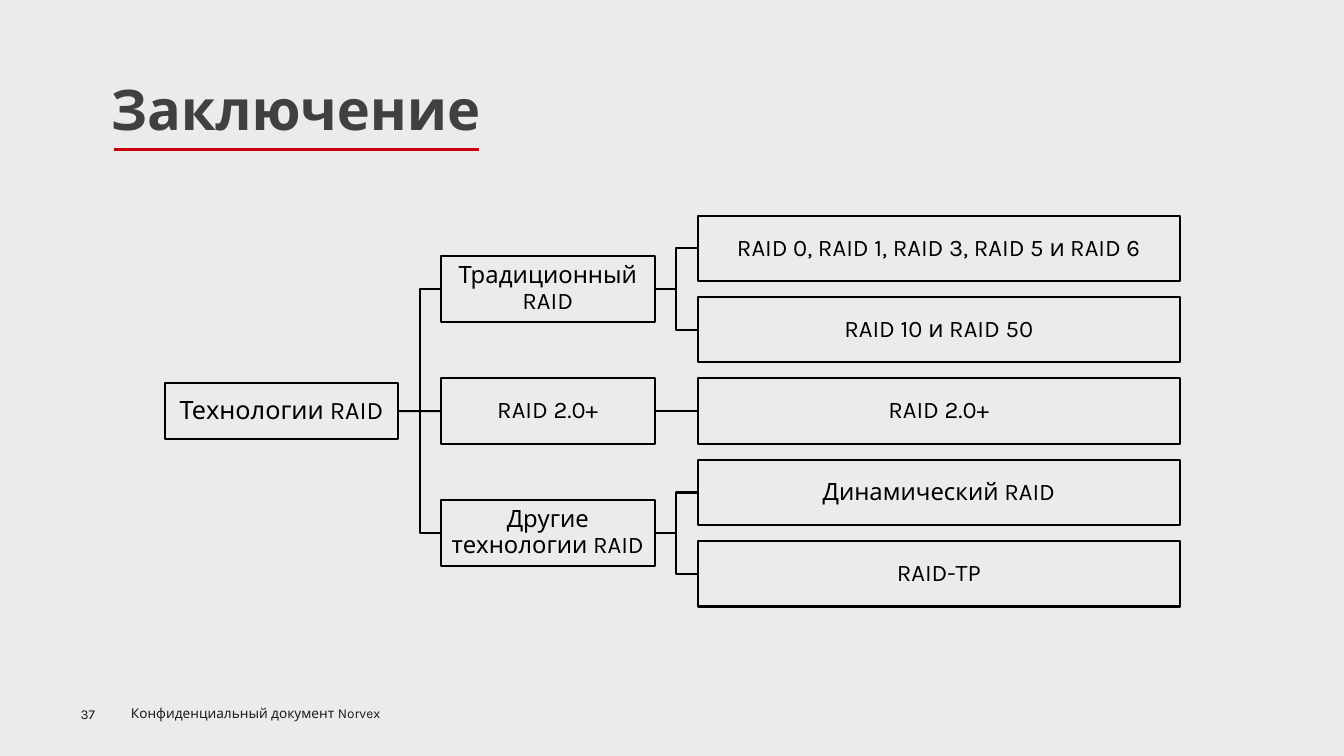
"""Build the closing slide with a tree of RAID technologies."""
from pptx import Presentation, util as u
from pptx.dml.color import RGBColor
from pptx.enum import shapes, text
from pptx.oxml.ns import qn
from lxml import etree

TITLE = "Заключение"
PAGE = "37"
FOOTER = "Конфиденциальный документ Norvex"
ROOT = "Технологии RAID"
BRANCHES = [
    ("Традиционный RAID", ["RAID 0, RAID 1, RAID 3, RAID 5 и RAID 6", "RAID 10 и RAID 50"]),
    ("RAID 2.0+", ["RAID 2.0+"]),
    ("Другие технологии RAID", ["Динамический RAID", "RAID-TP"]),
]

FONT = "Karla"
BLACK, RED, GREY, INK, PAPER = "000000", "C7000B", "404040", "1D1D1B", "EBEBEB"
ROOT_BOX = dict(left=4.15, width=5.89, height=1.4, size=18)
BRANCH_BOX = dict(left=11.11, width=5.39, height=1.65, size=17)
LEAF_BOX = dict(left=17.59, width=12.14, height=1.65, size=17)
FIRST_LEAF, LEAF_STEP = 6.26, 2.05


def color(value):
    return RGBColor.from_string(value)


def style(target, **values):
    for name, value in values.items():
        setattr(target, name, value)


def write(shape, words, size, ink, align, anchor, inset=None, spacing=None, bold=False, wrap=True):
    frame = shape.text_frame
    style(frame, text=words, word_wrap=wrap, vertical_anchor=anchor, auto_size=text.MSO_AUTO_SIZE.NONE)
    if inset is not None:
        for side in ("left", "right", "top", "bottom"):
            setattr(frame, f"margin_{side}", u.Cm(inset))
    paragraph = frame.paragraphs[0]
    style(paragraph, alignment=align, line_spacing=spacing)
    style(paragraph.font, name=FONT, size=u.Pt(size), bold=bold)
    paragraph.font.color.rgb = color(ink)


def add_node(words, middle, left, width, height, size):
    node = slide.shapes.add_shape(
        shapes.MSO_SHAPE.RECTANGLE, u.Cm(left), u.Cm(middle - height / 2), u.Cm(width), u.Cm(height))
    node.shadow.inherit = False
    node.fill.background()
    node.line.color.rgb = color(BLACK)
    node.line.width = u.Pt(1.5)
    write(node, words, size, BLACK, text.PP_ALIGN.CENTER, text.MSO_ANCHOR.MIDDLE, 0.03, 0.9)
    return node


def add_line(kind, ink, width, ends=(0, 0, 0, 0)):
    line = slide.shapes.add_connector(kind, *map(u.Cm, ends))
    line.line.color.rgb = color(ink)
    line.line.width = u.Pt(width)
    etree.SubElement(line._element.spPr, qn("a:effectLst"))
    return line


def join(parent, child, level):
    kind = shapes.MSO_CONNECTOR.STRAIGHT if level else shapes.MSO_CONNECTOR.ELBOW
    line = add_line(kind, BLACK, 1.5)
    line.begin_connect(parent, 3)
    line.end_connect(child, 1)


def add_note(words, box, inset=None):
    note = slide.shapes.add_textbox(*map(u.Cm, box))
    write(note, words, 9.7, INK, text.PP_ALIGN.LEFT, text.MSO_ANCHOR.TOP, inset)


deck = Presentation()
style(deck, slide_width=u.Cm(33.87), slide_height=u.Cm(19.05))
slide = deck.slides.add_slide(deck.slide_layouts[5])
slide.background.fill.solid()
slide.background.fill.fore_color.rgb = color(PAPER)

heading = slide.shapes.title
style(heading, left=u.Cm(2.54), top=u.Cm(1.75), width=u.Cm(10.19), height=u.Cm(1.96))
write(heading, TITLE, 40, GREY, text.PP_ALIGN.LEFT, text.MSO_ANCHOR.TOP, bold=True, wrap=False)
add_line(shapes.MSO_CONNECTOR.STRAIGHT, RED, 2.25, (2.87, 3.76, 12.07, 3.76))
add_note(PAGE, (2.03, 17.78, 1.4, 0.41), 0)
add_note(FOOTER, (3.05, 17.65, 8.56, 0.66))

leaf_count = sum(len(leaves) for _, leaves in BRANCHES)
root_middle = FIRST_LEAF + LEAF_STEP * (leaf_count - 1) / 2
root = add_node(ROOT, root_middle, **ROOT_BOX)
row = 0
for branch_name, leaves in BRANCHES:
    middles = [FIRST_LEAF + LEAF_STEP * (row + i) for i in range(len(leaves))]
    branch_middle = sum(middles) / len(middles)
    branch = add_node(branch_name, branch_middle, **BRANCH_BOX)
    join(root, branch, abs(branch_middle - root_middle) < 0.01)
    for leaf_name, middle in zip(leaves, middles):
        leaf = add_node(leaf_name, middle, **LEAF_BOX)
        join(branch, leaf, abs(middle - branch_middle) < 0.01)
    row += len(leaves)

deck.save("out.pptx")
